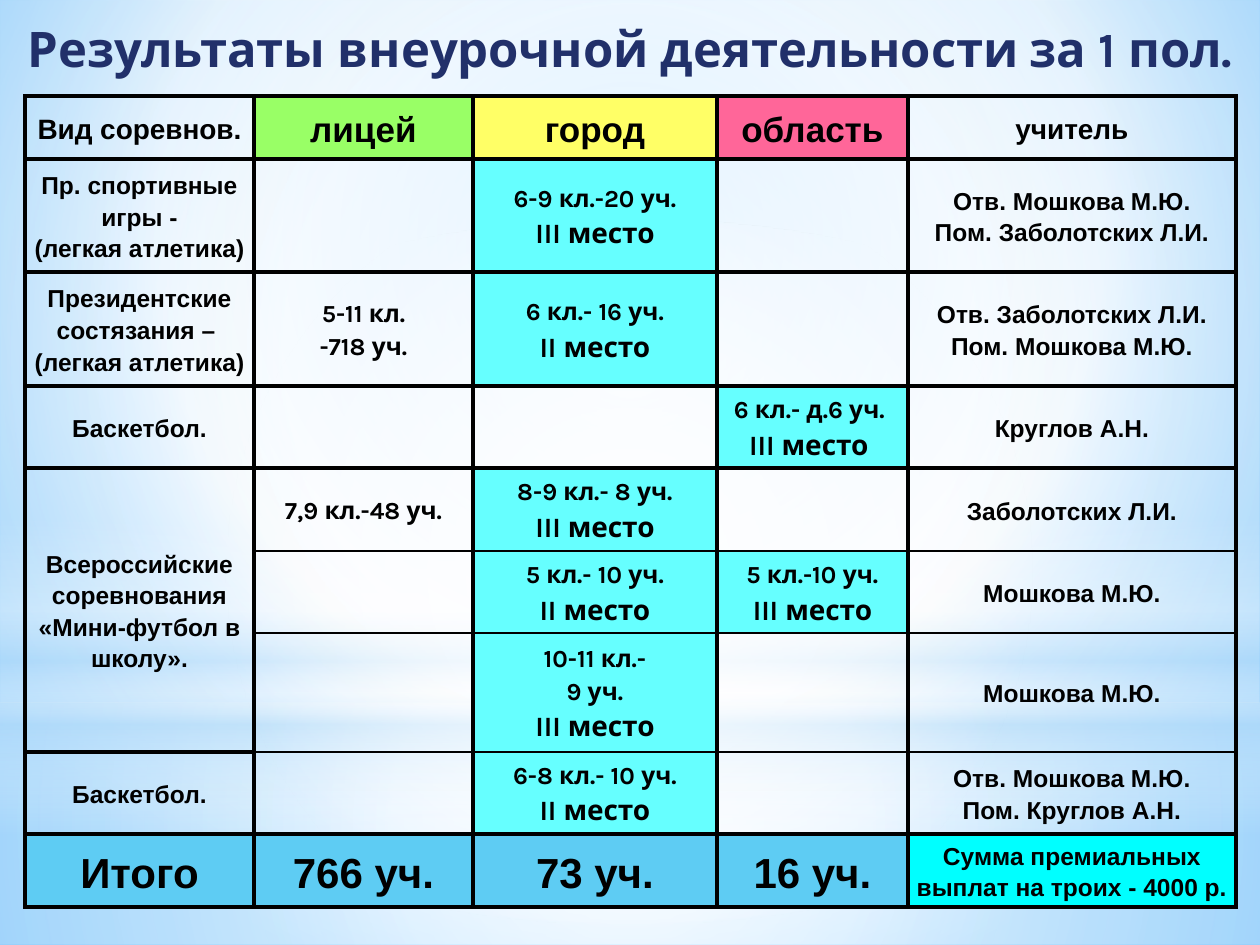
from dataclasses import dataclass
from typing import Optional

from lxml.etree import SubElement
from pptx import Presentation
from pptx.dml.color import RGBColor as Rgb
from pptx.enum.shapes import MSO_SHAPE as Preset
from pptx.enum.text import MSO_ANCHOR as Anchor, PP_ALIGN as Align
from pptx.oxml.ns import qn
from pptx.util import Emu, Pt

EMU_PER_PX = 914400 / 126


@dataclass(frozen=True)
class Theme:
    arial: str = "Arial"
    karla: str = "Karla"
    ink: str = "000000"
    navy: str = "21306A"
    green: str = "99FF66"
    yellow: str = "FFFF66"
    pink: str = "FF6699"
    aqua: str = "66FFFF"
    cyan: str = "00FFFF"
    blue: str = "5ECCF3"
    sky: str = "B4DCFA"
    white: str = "FFFFFF"
    body: int = 14
    medium: int = 16
    large: int = 20
    total: int = 24
    title: int = 28
    thick: float = 2.25
    thin: float = 1


THEME = Theme()


@dataclass(frozen=True)
class Stop:
    percent: int
    color: str
    alpha: int = 100


@dataclass(frozen=True)
class Glow:
    """A soft backdrop shape; a glow without focus fades from top to bottom."""
    preset: Preset
    top: int
    height: int
    stops: tuple[Stop, ...]
    focus: Optional[tuple[int, ...]] = (50, 50, 50, 50)


@dataclass(frozen=True)
class Entry:
    lines: tuple[str, ...] = ()
    size: int = THEME.body
    font: str = THEME.arial
    fill: Optional[str] = None


WHITE, SKY = THEME.white, THEME.sky
BACKDROP = (Stop(0, "9ED5FF"), Stop(60, WHITE), Stop(100, "5BB9FF"))
GLOWS = (
    Glow(Preset.RECTANGLE, 703, 242, (Stop(0, WHITE, 91), Stop(37, WHITE, 76), Stop(100, SKY, 79))),
    Glow(Preset.RECTANGLE, 0, 703, (Stop(0, WHITE, 89), Stop(48, WHITE, 62), Stop(100, SKY, 79))),
    Glow(Preset.RECTANGLE, 519, 315,
         (Stop(0, WHITE, 0), Stop(29, WHITE, 30), Stop(45, SKY, 40),
          Stop(55, WHITE, 26), Stop(65, SKY, 60), Stop(100, WHITE, 0)), None),
    Glow(Preset.OVAL, 220, 703, (Stop(0, WHITE), Stop(56, WHITE, 0))),
)


def label(*lines: str) -> Entry:
    return Entry(lines)


def count(*lines: str) -> Entry:
    return Entry(lines, font=THEME.karla)


def prize(*lines: str) -> Entry:
    return Entry(lines, font=THEME.karla, fill=THEME.aqua)


def level(name: str, fill: str) -> Entry:
    return Entry((name,), THEME.large, fill=fill)


def total(text: str) -> Entry:
    return Entry((text,), THEME.total, fill=THEME.blue)


NONE = Entry()
COLUMNS = (229, 219, 244, 191, 328)
ROWS = (63, 113, 114, 82, 83, 82, 119, 82, 73)
FOOTBALL_ROWS = range(4, 7)
RESULTS = (
    (Entry(("Вид соревнов.",), THEME.medium), level("лицей", THEME.green),
     level("город", THEME.yellow), level("область", THEME.pink),
     Entry(("учитель",), THEME.medium)),
    (label("Пр. спортивные игры -", "(легкая атлетика)"), NONE,
     prize("6-9 кл.-20 уч.", "III место"), NONE,
     label("Отв. Мошкова М.Ю.", "Пом. Заболотских Л.И.")),
    (label("Президентские состязания – ", "(легкая атлетика)"),
     count("5-11 кл.", "-718 уч."), prize("6 кл.- 16 уч.", "II место"), NONE,
     label("Отв. Заболотских Л.И.", "Пом. Мошкова М.Ю.")),
    (label("Баскетбол."), NONE, NONE,
     prize("6 кл.- д.6 уч. ", "III место "), label("Круглов А.Н.")),
    (label("Всероссийские", "соревнования", "«Мини-футбол в школу»."),
     count("7,9 кл.-48 уч."), prize("8-9 кл.- 8 уч.", "III место"), NONE,
     label("Заболотских Л.И.")),
    (NONE, NONE, prize("5 кл.- 10 уч.", "II место"),
     prize("5 кл.-10 уч.", "III место"), label("Мошкова М.Ю.")),
    (NONE, NONE, prize("10-11 кл.-", "9 уч.", "III место"), NONE, label("Мошкова М.Ю.")),
    (label("Баскетбол."), NONE, prize("6-8 кл.- 10 уч.", "II место"), NONE,
     label("Отв. Мошкова М.Ю.", "Пом. Круглов А.Н.")),
    (total("Итого"), total("766 уч."), total("73 уч."), total("16 уч."),
     Entry(("Сумма премиальных выплат на троих - 4000 р.",), fill=THEME.cyan)),
)
TITLE = (("Результаты внеурочной деятельности", THEME.title),
         (" ", THEME.total), ("за 1 пол.", THEME.title))


def px(length: int) -> Emu:
    return Emu(round(length * EMU_PER_PX))


def apply(target, values: dict) -> None:
    for name, value in values.items():
        setattr(target, name, value)


def paint_gradient(owner, stops: tuple[Stop, ...], focus: Optional[tuple[int, ...]]) -> None:
    """Fill a shape or a page background; focus holds left, top, right, bottom insets."""
    owner.fill.gradient()
    node = next(owner.fill._xPr.iter(qn("a:gradFill")))
    for child in list(node):
        node.remove(child)
    stop_list = SubElement(node, qn("a:gsLst"))
    for stop in stops:
        mark = SubElement(stop_list, qn("a:gs"), pos=str(stop.percent * 1000))
        color = SubElement(mark, qn("a:srgbClr"), val=stop.color)
        if stop.alpha < 100:
            SubElement(color, qn("a:alpha"), val=str(stop.alpha * 1000))
    if focus is None:
        SubElement(node, qn("a:lin"), ang="5400000", scaled="0")
        return
    path = SubElement(node, qn("a:path"), path="circle")
    SubElement(path, qn("a:fillToRect"),
               {side: str(inset * 1000) for side, inset in zip("ltrb", focus)})


def add_glow(page, glow: Glow) -> None:
    shape = page.shapes.add_shape(glow.preset, 0, px(glow.top), px(1260), px(glow.height))
    shape.shadow.inherit = False
    shape.line.fill.background()
    paint_gradient(shape, glow.stops, glow.focus)


def set_borders(cell, widths: dict[str, float]) -> None:
    """Draw the sides L, R, T, B in that order; a zero width hides the side."""
    properties = cell._tc.get_or_add_tcPr()
    for index, (side, width) in enumerate(widths.items()):
        line = SubElement(properties, qn(f"a:ln{side}"), w=str(Pt(width)))
        if width:
            SubElement(SubElement(line, qn("a:solidFill")), qn("a:srgbClr"), val=THEME.ink)
        else:
            SubElement(line, qn("a:noFill"))
        properties.insert(index, line)


def add_span(para, text: str, size: int, font: str, color: str) -> None:
    span = para.add_run()
    span.text = text
    apply(span.font, {"name": font, "size": Pt(size), "bold": True})
    span.font.color.rgb = Rgb.from_string(color)


def add_grid(page, left: int, top: int, columns: tuple[int, ...], rows: tuple[int, ...]):
    table = page.shapes.add_table(len(rows), len(columns), px(left), px(top),
                                  px(sum(columns)), px(sum(rows))).table
    apply(table, {"first_row": False, "horz_banding": False})
    for column, width in zip(table.columns, columns):
        column.width = px(width)
    for row, height in zip(table.rows, rows):
        row.height = px(height)
    return table


def fill_cell(cell, entry: Entry) -> None:
    apply(cell, {"margin_left": px(5), "margin_right": px(5), "margin_top": px(3),
                 "margin_bottom": px(3), "vertical_anchor": Anchor.MIDDLE})
    if entry.fill:
        cell.fill.solid()
        cell.fill.fore_color.rgb = Rgb.from_string(entry.fill)
    else:
        cell.fill.background()
    for index, text in enumerate(entry.lines):
        para = cell.text_frame.add_paragraph() if index else cell.text_frame.paragraphs[0]
        apply(para, {"alignment": Align.CENTER, "line_spacing": 1.15})
        size = THEME.medium if "место" in text else entry.size
        add_span(para, text, size, entry.font, THEME.ink)


def add_results(page) -> None:
    table = add_grid(page, 25, 96, COLUMNS, ROWS)
    for row, entries in enumerate(RESULTS):
        for column, entry in enumerate(entries):
            cell = table.cell(row, column)
            fill_cell(cell, entry)
            above, below = (THEME.thin if column and edge in FOOTBALL_ROWS else THEME.thick
                            for edge in (row - 1, row))
            set_borders(cell, {"L": THEME.thick, "R": THEME.thick, "T": above, "B": below})
    table.cell(FOOTBALL_ROWS[0], 0).merge(table.cell(FOOTBALL_ROWS[-1], 0))


def add_title(page) -> None:
    cell = add_grid(page, 0, 16, (1260,), (72,)).cell(0, 0)
    cell.fill.background()
    set_borders(cell, dict.fromkeys("LRTB", 0))
    para = cell.text_frame.paragraphs[0]
    para.alignment = Align.CENTER
    for text, size in TITLE:
        add_span(para, text, size, THEME.karla, THEME.navy)


def main() -> None:
    deck = Presentation()
    apply(deck, {"slide_width": px(1260), "slide_height": px(945)})
    page = deck.slides.add_slide(deck.slide_layouts[6])
    paint_gradient(page.background, BACKDROP, (20, 10, 20, 60))
    for glow in GLOWS:
        add_glow(page, glow)
    add_results(page)
    add_title(page)
    deck.save("out.pptx")


if __name__ == "__main__":
    main()
